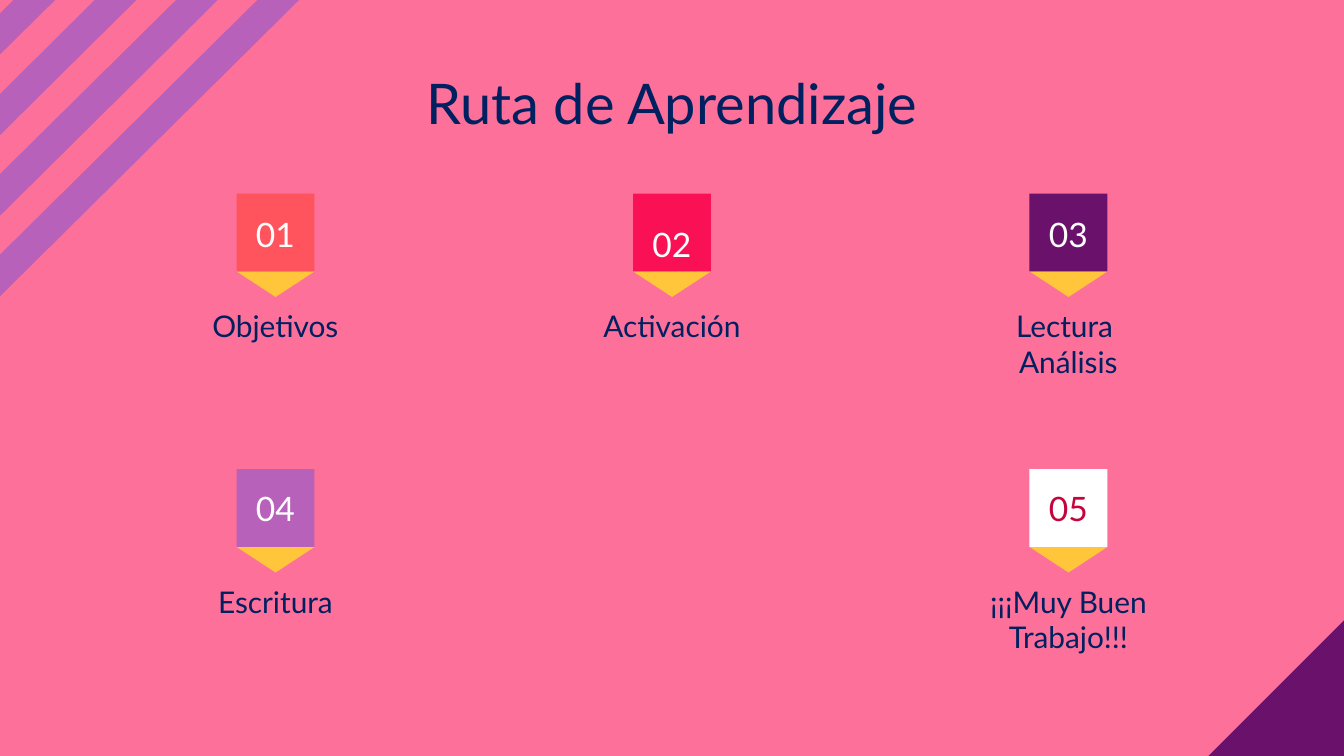
import dataclasses

import pptx
import pptx.dml.color
import pptx.enum.shapes
import pptx.enum.text
import pptx.util

PX = pptx.util.Inches(1) // 200
SLIDE_W, SLIDE_H = 2000, 1125
SHAPE = pptx.enum.shapes.MSO_SHAPE
ANCHOR = pptx.enum.text.MSO_ANCHOR


@dataclasses.dataclass(frozen=True)
class Theme:
    font: str = "Lato"
    title_pt: int = 30
    number_pt: int = 18
    label_pt: int = 16
    background: str = "FC7099"
    navy: str = "002060"
    white: str = "FFFFFF"
    lilac: str = "B861BA"
    purple: str = "69116B"
    yellow: str = "FFC53B"
    coral: str = "FF545D"
    red: str = "FA1155"
    crimson: str = "C4043C"


THEME = Theme()


@dataclasses.dataclass(frozen=True)
class Step:
    number: str
    label: str
    column: int
    row: int
    fill: str
    number_color: str = THEME.white
    number_top: int = 20


STEPS = [
    Step("01", "Objetivos", 0, 0, THEME.coral),
    Step("02", "Activación", 1, 0, THEME.red, number_top=36),
    Step("03", "Lectura \nAnálisis", 2, 0, THEME.purple),
    Step("04", "Escritura", 0, 1, THEME.lilac, number_top=18),
    Step("05", "¡¡¡Muy Buen Trabajo!!!", 2, 1, THEME.white, THEME.crimson, 18),
]


def rgb(color):
    return pptx.dml.color.RGBColor.from_string(color)


def paint(sp, color):
    """Give a shape a flat fill without line or shadow."""
    sp.shadow.inherit = False
    sp.fill.solid()
    sp.fill.fore_color.rgb = rgb(color)
    sp.line.fill.background()


def add_block(s, kind, x, y, w, h, color, rotation=0):
    sp = s.shapes.add_shape(kind, x * PX, y * PX, w * PX, h * PX)
    sp.rotation = rotation
    paint(sp, color)


def add_text(s, text, x, y, w, h, size, color, anchor=ANCHOR.TOP):
    """Add centred text, one paragraph for each line."""
    tf = s.shapes.add_textbox(x * PX, y * PX, w * PX, h * PX).text_frame
    tf.word_wrap = True
    tf.vertical_anchor = anchor
    tf.margin_left = tf.margin_right = tf.margin_top = tf.margin_bottom = 20 * PX
    tf.text = text
    for p in tf.paragraphs:
        p.alignment = pptx.enum.text.PP_ALIGN.CENTER
        for r in p.runs:
            r.font.name = THEME.font
            r.font.size = pptx.util.Pt(size)
            r.font.color.rgb = rgb(color)


def add_stripes(s, x, y, count=4, pitch=121, thickness=62, slope=0.99):
    """Draw diagonal stripes across the corner at x, y."""
    for i in range(count):
        outer = 82 + i * pitch
        inner = outer - thickness
        builder = s.shapes.build_freeform(x + inner, y, scale=PX)
        builder.add_line_segments([
            (x + outer, y),
            (x, y + round(outer * slope)),
            (x, y + round(inner * slope)),
        ])
        paint(builder.convert_to_shape(), THEME.lilac)


def add_corner(s, right, bottom, size=202):
    add_block(s, SHAPE.RIGHT_TRIANGLE, right - size, bottom - size,
              size, size, THEME.purple, rotation=270)


def add_step(s, step, x, y, w):
    """Draw a numbered badge with its label, centred in a box of width w."""
    badge, arrow = 116, 38
    left = x + (w - badge) // 2
    add_block(s, SHAPE.ISOSCELES_TRIANGLE, left, y + badge, badge, arrow,
              THEME.yellow, rotation=180)
    add_block(s, SHAPE.RECTANGLE, left, y, badge, badge, step.fill)
    add_text(s, step.number, x + 13, y + step.number_top, w - 26, 80,
             THEME.number_pt, step.number_color, ANCHOR.MIDDLE)
    add_text(s, step.label, x, y + 150, w, 174, THEME.label_pt, THEME.navy)


def add_steps(s, x, y, column_pitch=590, row_pitch=410):
    for step in STEPS:
        add_step(s, step, x + step.column * column_pitch,
                 y + step.row * row_pitch, 440)


def main():
    prs = pptx.Presentation()
    prs.slide_width, prs.slide_height = SLIDE_W * PX, SLIDE_H * PX
    s = prs.slides.add_slide(prs.slide_layouts[6])
    s.background.fill.solid()
    s.background.fill.fore_color.rgb = rgb(THEME.background)
    add_stripes(s, 0, 0)
    add_corner(s, SLIDE_W, SLIDE_H)
    add_text(s, "Ruta de Aprendizaje", 157, 82, 1686, 126,
             THEME.title_pt, THEME.navy)
    add_steps(s, 190, 288)
    prs.save("out.pptx")


if __name__ == "__main__":
    main()
